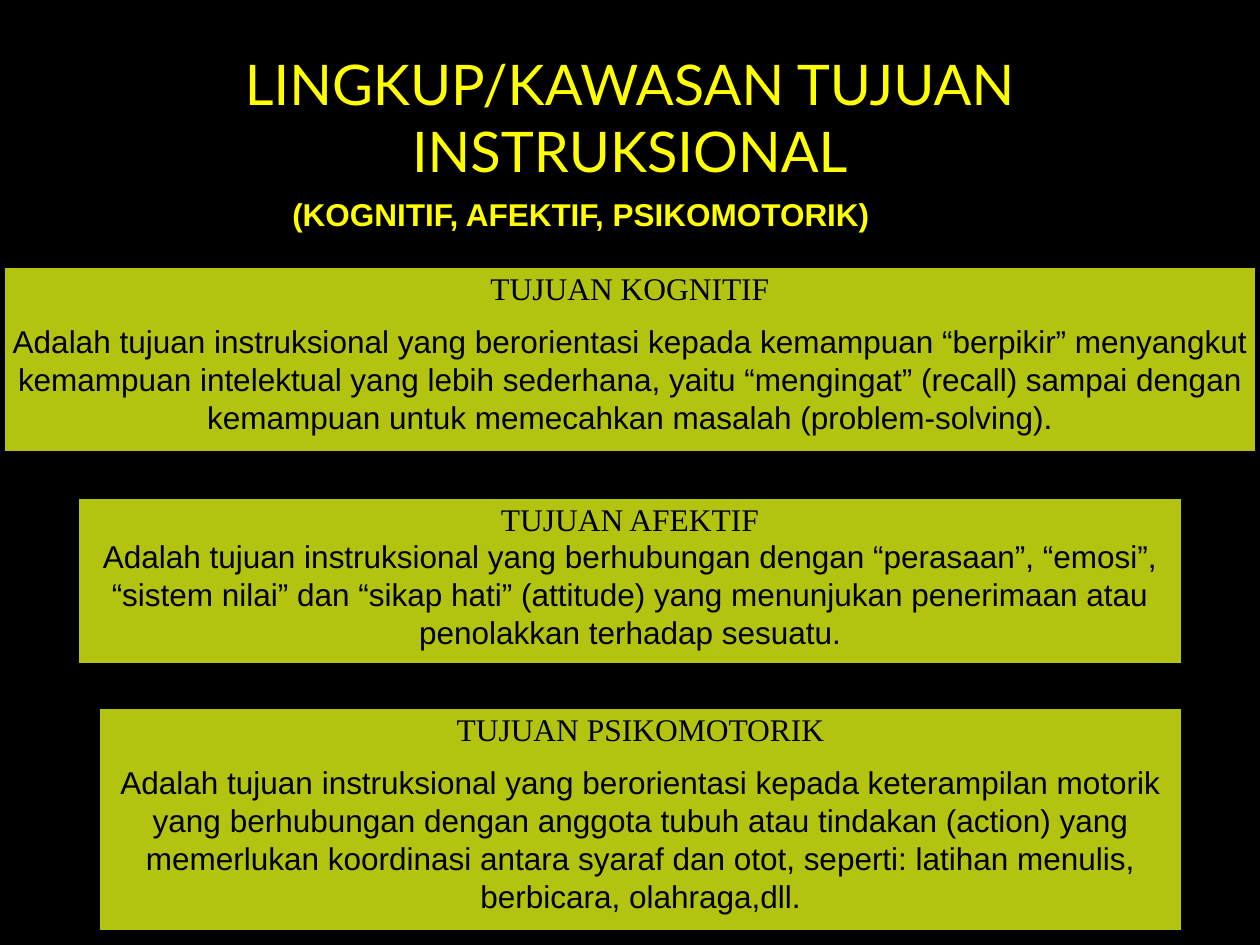
from pptx import Presentation
from pptx import util as u
from pptx.dml.color import RGBColor
from pptx.enum import shapes, text
from pptx.oxml.ns import qn
from lxml import etree

HUES = {"back": "000000", "ink": "000000", "head": "FFFF00", "box": "DFF414"}


class Deck:
    """Holds the style and the current slide."""

    def __init__(self):
        self.prs = Presentation()
        self.prs.slide_width, self.prs.slide_height = u.Pt(720), u.Pt(540)
        self.slide = self.prs.slides.add_slide(self.prs.slide_layouts[6])
        self.paint(self.slide.background.fill, "back")

    def paint(self, fill, hue):
        fill.solid()
        fill.fore_color.rgb = RGBColor.from_string(HUES[hue])

    def phrase(self, para, words, face, size, hue, bold=False):
        para.alignment = text.PP_ALIGN.CENTER
        run = para.add_run()
        run.text = words
        font = run.font
        font.name, font.size, font.bold = face, u.Pt(size), bold
        font.color.rgb = RGBColor.from_string(HUES[hue])

    def label(self, area, words, face, size, bold=False):
        frame = self.slide.shapes.add_textbox(*map(u.Pt, area)).text_frame
        frame.word_wrap = True
        frame.vertical_anchor = text.MSO_ANCHOR.MIDDLE
        self.phrase(frame.paragraphs[0], words, face, size, "head", bold)

    def panel(self, area, title, body, gap):
        box = self.slide.shapes.add_shape(
            shapes.MSO_SHAPE.RECTANGLE, *map(u.Pt, area))
        box.shadow.inherit = False
        self.paint(box.fill, "box")
        tint = box._element.spPr.find(qn("a:solidFill"))[0]
        etree.SubElement(tint, qn("a:alpha")).set("val", "80000")
        self.paint(box.line.fill, "back")
        box.line.width = u.Pt(6)
        frame = box.text_frame
        frame.word_wrap = True
        frame.vertical_anchor = text.MSO_ANCHOR.TOP
        self.phrase(frame.paragraphs[0], title, "Times New Roman", 18, "ink")
        para = frame.add_paragraph()
        para.space_before = u.Pt(gap)
        self.phrase(para, body, "Arial", 18, "ink")


PANELS = [
    ((0, 150, 720, 110.6), "TUJUAN KOGNITIF",
     "Adalah tujuan instruksional yang berorientasi kepada kemampuan “berpikir” "
     "menyangkut kemampuan intelektual yang lebih sederhana, yaitu “mengingat” "
     "(recall) sampai dengan kemampuan untuk memecahkan masalah "
     "(problem-solving).", 9),
    ((42, 282, 636, 100), "TUJUAN AFEKTIF",
     "Adalah tujuan instruksional yang berhubungan dengan “perasaan”, “emosi”, "
     "“sistem nilai” dan “sikap hati” (attitude) yang menunjukan penerimaan atau "
     "penolakkan terhadap sesuatu.", 0),
    ((54, 402, 624, 132.4), "TUJUAN PSIKOMOTORIK",
     "Adalah tujuan instruksional yang berorientasi kepada keterampilan motorik "
     "yang berhubungan dengan anggota tubuh atau tindakan (action) yang "
     "memerlukan koordinasi antara syaraf dan otot, seperti: latihan menulis, "
     "berbicara, olahraga,dll.", 9),
]


def main():
    deck = Deck()
    deck.label((36, 21.6, 648, 90), "LINGKUP/KAWASAN TUJUAN INSTRUKSIONAL",
               "Lato", 32)
    deck.label((150, 108, 364, 29), "(KOGNITIF, AFEKTIF, PSIKOMOTORIK)",
               "Arial", 18, True)
    for item in PANELS:
        deck.panel(*item)
    deck.prs.save("out.pptx")


if __name__ == "__main__":
    main()
